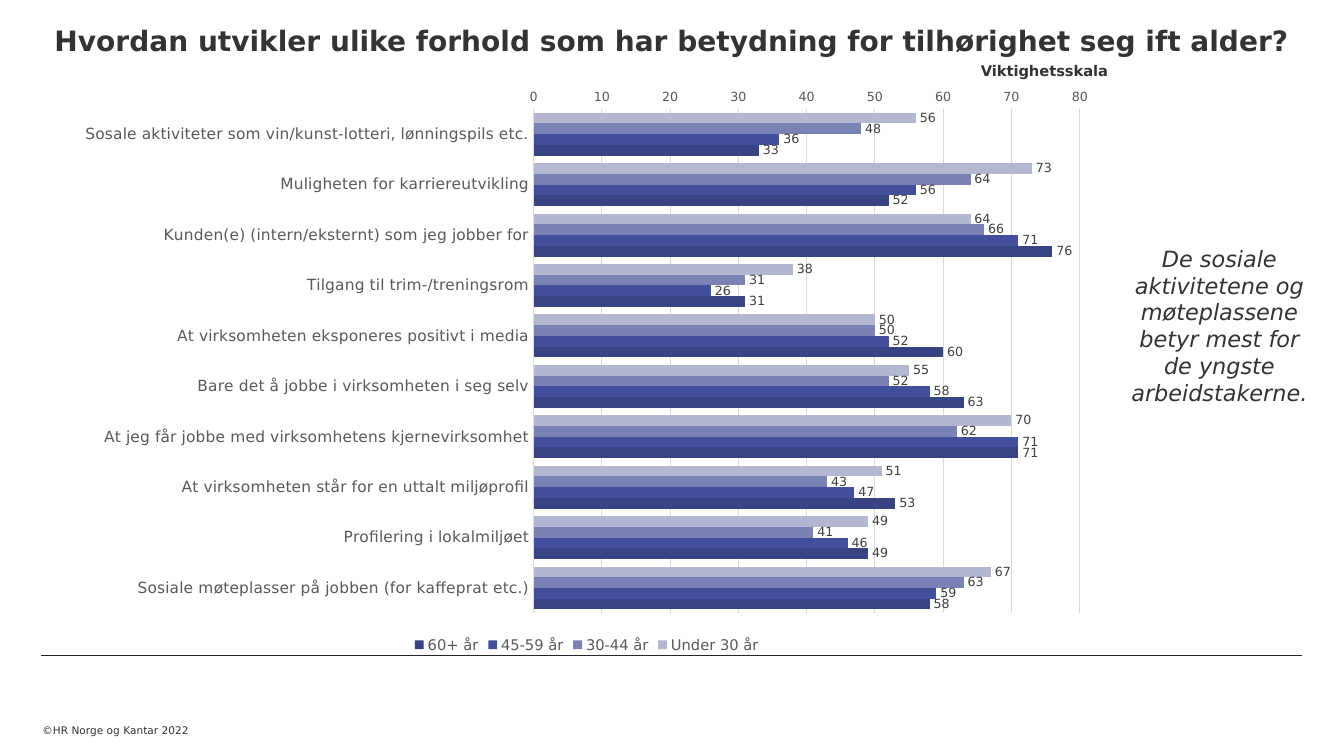
from lxml import etree
from pptx import Presentation
from pptx.chart.data import CategoryChartData
from pptx.dml.color import RGBColor
from pptx.enum.chart import XL_CHART_TYPE, XL_LABEL_POSITION, XL_LEGEND_POSITION, XL_TICK_MARK
from pptx.enum.shapes import MSO_CONNECTOR
from pptx.enum.text import MSO_ANCHOR, MSO_AUTO_SIZE, PP_ALIGN
from pptx.oxml import parse_xml
from pptx.oxml.ns import nsdecls, qn
from pptx.util import Inches, Pt

BAR = XL_CHART_TYPE.BAR_CLUSTERED
OUTSIDE = XL_LABEL_POSITION.OUTSIDE_END
BOTTOM = XL_LEGEND_POSITION.BOTTOM
NO_TICK = XL_TICK_MARK.NONE
STRAIGHT = MSO_CONNECTOR.STRAIGHT
TOP = MSO_ANCHOR.TOP
NO_FIT, GROW = MSO_AUTO_SIZE.NONE, MSO_AUTO_SIZE.SHAPE_TO_FIT_TEXT
LEFT, CENTER = PP_ALIGN.LEFT, PP_ALIGN.CENTER

FONT = "DejaVu Sans"
NUMBER_FORMAT = "###0"
COLORS = {
    "text": "333333", "axis": "595959", "label": "404040",
    "grid": "D9D9D9", "rule": "262626",
    "Under 30 år": "B4B7D1", "30-44 år": "7A81B5",
    "45-59 år": "42509B", "60+ år": "374382",
}

AGE_GROUPS = ["Under 30 år", "30-44 år", "45-59 år", "60+ år"]
# One row per factor, one score per age group
SCORES = {
    "Sosale aktiviteter som vin/kunst-lotteri, lønningspils etc.": (56, 48, 36, 33),
    "Muligheten for karriereutvikling": (73, 64, 56, 52),
    "Kunden(e) (intern/eksternt) som jeg jobber for": (64, 66, 71, 76),
    "Tilgang til trim-/treningsrom": (38, 31, 26, 31),
    "At virksomheten eksponeres positivt i media": (50, 50, 52, 60),
    "Bare det å jobbe i virksomheten i seg selv": (55, 52, 58, 63),
    "At jeg får jobbe med virksomhetens kjernevirksomhet": (70, 62, 71, 71),
    "At virksomheten står for en uttalt miljøprofil": (51, 43, 47, 53),
    "Profilering i lokalmiljøet": (49, 41, 46, 49),
    "Sosiale møteplasser på jobben (for kaffeprat etc.)": (67, 63, 59, 58),
}


def rgb(name):
    return RGBColor.from_string(COLORS[name])


class SlideBuilder:
    def __init__(self, prs):
        self.s = prs.slides.add_slide(prs.slide_layouts[5])

    def style_font(self, font, size, color="text", bold=False, italic=False):
        font.name, font.size = FONT, Pt(size)
        font.bold, font.italic = bold, italic
        font.color.rgb = rgb(color)

    def style_line(self, line, color):
        line.color.rgb = rgb(color)
        line.width = Pt(0.75)

    def title(self, text, x, y, w, h):
        sp = self.s.shapes.title
        sp.left, sp.top, sp.width, sp.height = map(Inches, (x, y, w, h))
        tf = sp.text_frame
        tf.text = text
        tf.auto_size, tf.vertical_anchor = NO_FIT, TOP
        tf.margin_left = tf.margin_right = tf.margin_bottom = 0
        tf.margin_top = Inches(0.23)
        p = tf.paragraphs[0]
        p.alignment = LEFT
        self.style_font(p.font, 20, bold=True)

    def text(self, text, x, y, w, h, size, align=LEFT, wrap=True, inset=True, **style):
        tf = self.s.shapes.add_textbox(*map(Inches, (x, y, w, h))).text_frame
        tf.text = text
        tf.word_wrap = wrap
        tf.auto_size = GROW if inset else NO_FIT
        if not inset:
            tf.margin_left = tf.margin_right = tf.margin_top = tf.margin_bottom = 0
            tf.vertical_anchor = MSO_ANCHOR.BOTTOM
        p = tf.paragraphs[0]
        p.alignment = align
        self.style_font(p.font, size, **style)

    def rule(self, x1, x2, y):
        line = self.s.shapes.add_connector(STRAIGHT, *map(Inches, (x1, y, x2, y)))
        self.style_line(line.line, "rule")
        etree.SubElement(line._element.spPr, qn("a:effectLst"))

    def bar_chart(self, x, y, w, h):
        data = CategoryChartData(number_format=NUMBER_FORMAT)
        data.categories = list(SCORES)
        for group, values in zip(AGE_GROUPS, zip(*SCORES.values())):
            data.add_series(group, values)
        chart = self.s.shapes.add_chart(BAR, *map(Inches, (x, y, w, h)), data).chart
        chart.has_title = False
        chart.font.name, chart.font.size = FONT, Pt(10)
        chart.has_legend = True
        chart.legend.position = BOTTOM
        chart.legend.include_in_layout = False
        self.style_font(chart.legend.font, 10.5, "axis")
        self.style_axes(chart)
        self.style_bars(chart.plots[0])
        self.place_plot(chart, 0.449, 0.051, 0.523, 0.873)

    def style_axes(self, chart):
        cat, val = chart.category_axis, chart.value_axis
        for axis, size in ((cat, 11), (val, 9)):
            axis.major_tick_mark = axis.minor_tick_mark = NO_TICK
            self.style_font(axis.tick_labels.font, size, "axis")
        cat.reverse_order = True
        cat.has_major_gridlines = False
        self.style_line(cat.format.line, "grid")
        val.minimum_scale, val.maximum_scale, val.major_unit = 0, 80, 10
        val.tick_labels.number_format = NUMBER_FORMAT
        val.tick_labels.number_format_is_linked = False
        val.format.line.fill.background()
        self.style_line(val.major_gridlines.format.line, "grid")

    def style_bars(self, plot):
        plot.gap_width, plot.overlap = 70, 0
        plot.vary_by_categories = False
        for series in plot.series:
            series.format.fill.solid()
            series.format.fill.fore_color.rgb = rgb(series.name)
            labels = series.data_labels
            labels.show_value = True
            labels.position = OUTSIDE
            labels.number_format = NUMBER_FORMAT
            labels.number_format_is_linked = False
            self.style_font(labels.font, 9, "label")

    def place_plot(self, chart, x, y, w, h):
        """Fix the inner plot area, in fractions of the chart."""
        area = chart._chartSpace.chart.plotArea
        for old in area.findall(qn("c:layout")):
            area.remove(old)
        places = "".join(f'<c:{k} val="{v}"/>' for k, v in zip("xywh", (x, y, w, h)))
        area.insert(0, parse_xml(
            f'<c:layout {nsdecls("c")}><c:manualLayout><c:layoutTarget val="inner"/>'
            f'<c:xMode val="edge"/><c:yMode val="edge"/>{places}'
            '</c:manualLayout></c:layout>'))


def main():
    prs = Presentation()
    prs.slide_width, prs.slide_height = Inches(13.33), Inches(7.5)
    slide = SlideBuilder(prs)
    slide.text("©HR Norge og Kantar 2022", 0.42, 7.02, 2.36, 0.29, 7.5, inset=False)
    slide.rule(0.41, 12.91, 6.5)
    slide.title("Hvordan utvikler ulike forhold som har betydning for tilhørighet "
                "seg ift alder?", 0.54, 0, 12.5, 1.41)
    slide.bar_chart(0.64, 0.79, 10.36, 5.73)
    slide.text("Viktighetsskala", 9.63, 0.56, 1.47, 0.28, 10.5, wrap=False, bold=True)
    slide.text("De sosiale aktivitetene og møteplassene betyr mest for de yngste "
               "arbeidstakerne.", 11.11, 2.38, 1.97, 1.72, 16, align=CENTER, italic=True)
    prs.save("out.pptx")


if __name__ == "__main__":
    main()
